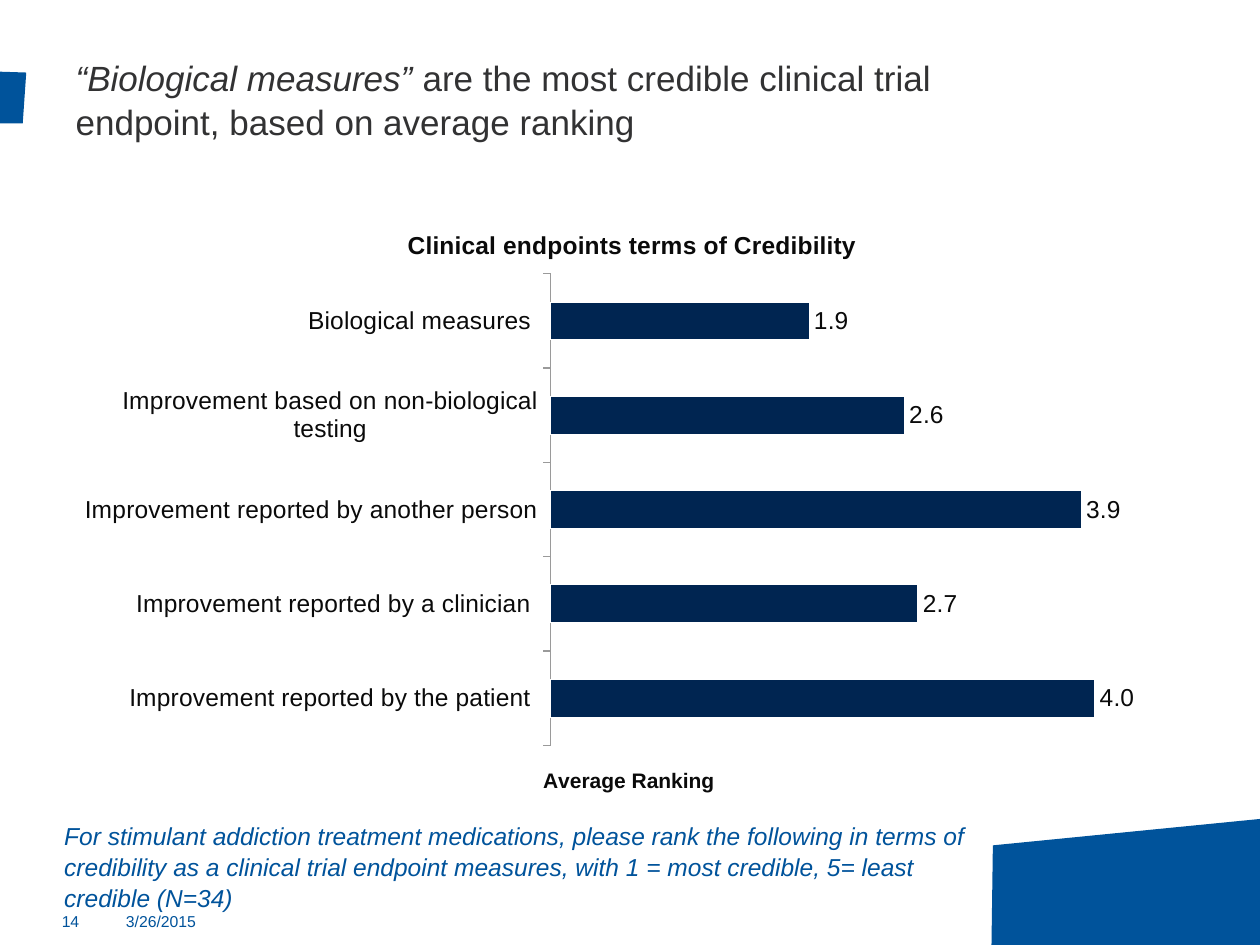
"""Build the slide on clinical trial endpoint credibility."""
from dataclasses import dataclass

from lxml.etree import SubElement
from pptx import Presentation
from pptx.chart.data import CategoryChartData
from pptx.dml.color import RGBColor as Color
from pptx.enum.chart import XL_CHART_TYPE as ChartType
from pptx.enum.chart import XL_LABEL_POSITION as LabelPosition
from pptx.enum.chart import XL_TICK_LABEL_POSITION as TickLabels
from pptx.enum.chart import XL_TICK_MARK as TickMark
from pptx.enum.text import MSO_ANCHOR as Anchor
from pptx.oxml.ns import qn
from pptx.util import Pt


@dataclass(frozen=True)
class Theme:
    font: str = "Arial"
    blue: Color = Color(0x00, 0x53, 0x9B)
    navy: Color = Color(0x00, 0x25, 0x51)
    gray: Color = Color(0x32, 0x32, 0x33)
    black: Color = Color(0x0A, 0x0A, 0x0A)
    white: Color = Color(0xFF, 0xFF, 0xFF)
    axis: Color = Color(0x9A, 0x9A, 0x9A)
    title: int = 20
    label: int = 14
    small: int = 12
    footer: int = 9
    spacing: float = 1.05


@dataclass(frozen=True)
class Note:
    text: str
    left: float
    top: float
    width: float
    height: float
    size: int
    italic: bool = False
    anchor: Anchor = Anchor.TOP
    inset: float = 0
    spacing: float = 1


THEME = Theme()
ACCENTS = (
    ((567.4, 483.1), (720, 468), (720, 540), (566.6, 540)),
    ((0, 41), (15, 41.5), (13, 70.6), (0, 70.6)),
)
NOTES = (
    Note("For stimulant addiction treatment medications, please rank the following "
         "in terms of credibility as a clinical trial endpoint measures, with "
         "1 = most credible, 5= least credible (N=34)",
         36.7, 491.8, 524.9, 33.1, THEME.label, True, Anchor.BOTTOM, 3.6, THEME.spacing),
    Note("3/26/2015", 72, 521.3, 52.6, 16.6, THEME.footer),
    Note("14", 35.3, 521.3, 27.4, 14.4, THEME.footer),
)
RANKINGS = {
    "Improvement reported by the patient ": 4.0,
    "Improvement reported by a clinician ": 2.7,
    "Improvement reported by another person": 3.9,
    "Improvement based on non-biological testing": 2.6,
    "Biological measures ": 1.9,
}


def style(font, size: int, color: Color, bold: bool = False, italic: bool = False) -> None:
    font.name, font.size, font.bold, font.italic = THEME.font, Pt(size), bold, italic
    font.color.rgb = color


def draw_accent(page, corners: tuple) -> None:
    points = [(Pt(x), Pt(y)) for x, y in corners]
    builder = page.shapes.build_freeform(*points[0])
    builder.add_line_segments(points[1:], close=True)
    accent = builder.convert_to_shape()
    accent.shadow.inherit = False
    accent.fill.solid()
    accent.fill.fore_color.rgb = THEME.blue
    accent.line.fill.background()


def draw_title(page) -> None:
    title = page.shapes.title
    title.left, title.top, title.width, title.height = Pt(36), Pt(39.6), Pt(560), Pt(33)
    title.text_frame.vertical_anchor = Anchor.MIDDLE
    title.text_frame.word_wrap = True
    para = title.text_frame.paragraphs[0]
    para.alignment = 1
    para.line_spacing = THEME.spacing
    for text, italic in (
        ("“Biological measures” ", True),
        ("are the most credible clinical trial endpoint, based on average ranking", False),
    ):
        span = para.add_run()
        span.text = text
        style(span.font, THEME.title, THEME.gray, italic=italic)


def draw_note(page, note: Note) -> None:
    box = page.shapes.add_textbox(Pt(note.left), Pt(note.top), Pt(note.width), Pt(note.height))
    frame = box.text_frame
    frame.word_wrap = True
    frame.vertical_anchor = note.anchor
    frame.margin_left = frame.margin_right = 0
    frame.margin_top = frame.margin_bottom = Pt(note.inset)
    para = frame.paragraphs[0]
    para.text = note.text
    para.line_spacing = note.spacing
    style(para.font, note.size, THEME.blue, italic=note.italic)


def place(part, **fractions: float) -> None:
    """Place a chart part by fractions of the chart's size."""
    for old in part.findall(qn("c:layout")):
        part.remove(old)
    layout = SubElement(part, qn("c:layout"))
    part.insert(0 if part.find(qn("c:tx")) is None else 1, layout)
    manual = SubElement(layout, qn("c:manualLayout"))
    if "w" in fractions:
        SubElement(manual, qn("c:layoutTarget")).set("val", "inner")
    for key in ("x", "y"):
        SubElement(manual, qn(f"c:{key}Mode")).set("val", "edge")
    for key, value in fractions.items():
        SubElement(manual, qn(f"c:{key}")).set("val", str(value))


def add_heading(owner, text: str, size: int, x: float, y: float) -> None:
    owner.has_title = True
    heading = owner.chart_title if hasattr(owner, "chart_title") else owner.axis_title
    para = heading.text_frame.paragraphs[0]
    para.text = text
    style(para.font, size, THEME.black, bold=True)
    place(heading._element, x=x, y=y)


def draw_chart(page) -> None:
    data = CategoryChartData(number_format="0.0")
    data.categories = list(RANKINGS)
    data.add_series("Series 1", list(RANKINGS.values()))
    chart = page.shapes.add_chart(
        ChartType.BAR_CLUSTERED, Pt(36), Pt(114.5), Pt(648), Pt(350), data).chart
    style(chart.font, THEME.small, THEME.black)
    chart.has_legend = False
    add_heading(chart, "Clinical endpoints terms of Credibility ", THEME.label, 0.3, 0.04)

    values = chart.value_axis
    values.minimum_scale, values.maximum_scale = 0, 4.5
    values.has_major_gridlines = False
    values.tick_labels.number_format = "0.0"
    values.tick_labels.number_format_is_linked = False
    add_heading(values, "Average Ranking", THEME.small, 0.42, 0.92)
    values.visible = False

    names = chart.category_axis
    names.major_tick_mark = TickMark.OUTSIDE
    names.tick_label_position = TickLabels.LOW
    names.format.line.color.rgb = THEME.axis
    style(names.tick_labels.font, THEME.label, THEME.black)

    plot = chart.plots[0]
    plot.gap_width = 150
    plot.vary_by_categories = False
    bars = plot.series[0]
    bars.format.fill.solid()
    bars.format.fill.fore_color.rgb = THEME.navy
    bars.format.line.color.rgb = THEME.white
    labels = bars.data_labels
    labels.show_value = True
    labels.position = LabelPosition.OUTSIDE_END
    labels.number_format = "0.0"
    labels.number_format_is_linked = False
    style(labels.font, THEME.label, THEME.black)
    place(chart._chartSpace.chart.plotArea, x=0.43, y=0.12, w=0.54, h=0.77)


def main() -> None:
    deck = Presentation()
    deck.slide_width, deck.slide_height = Pt(720), Pt(540)
    page = deck.slides.add_slide(deck.slide_layouts[5])
    for corners in ACCENTS:
        draw_accent(page, corners)
    draw_title(page)
    draw_chart(page)
    for note in NOTES:
        draw_note(page, note)
    deck.save("out.pptx")


if __name__ == "__main__":
    main()
